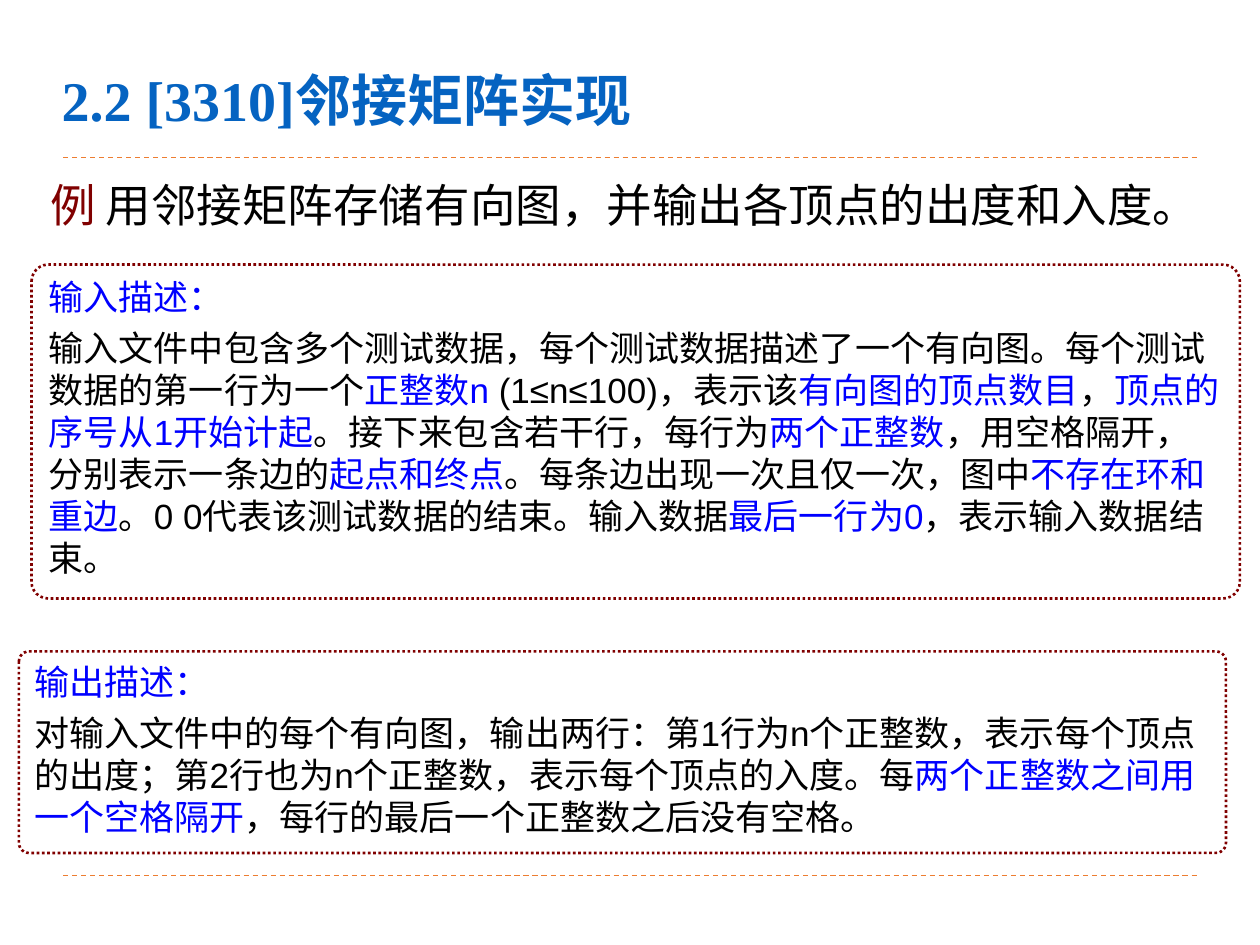
from dataclasses import dataclass

from lxml.etree import SubElement
from pptx import Presentation
from pptx.dml.color import RGBColor
from pptx.enum.dml import MSO_LINE_DASH_STYLE as Dash
from pptx.enum.shapes import MSO_CONNECTOR as Connector, MSO_SHAPE as Shape
from pptx.enum.text import MSO_ANCHOR as Anchor, PP_ALIGN as Align
from pptx.oxml.ns import qn
from pptx.slide import Slide
from pptx.util import Inches, Pt


def color(value):
    return RGBColor.from_string(value)


@dataclass
class SlideBuilder:
    page: Slide
    body_font: str = "Arial"
    title_font: str = "Times New Roman"
    title_color: str = "0563C1"
    rule_color: str = "ED7D31"
    border: str = "800000"
    text: str = "000000"
    highlight: str = "0000FF"
    paper: str = "FFFFFF"

    def rule(self, y):
        """Draw a dashed line across the page at height y."""
        line = self.page.shapes.add_connector(
            Connector.STRAIGHT, Inches(0.5), Inches(y), Inches(9.5), Inches(y))
        line.line.color.rgb = color(self.rule_color)
        line.line.width = Pt(0.75)
        line.line.dash_style = Dash.DASH
        SubElement(line.element.spPr, qn("a:effectLst"))

    def title(self, words, place):
        box = self.page.shapes.add_textbox(*map(Inches, place))
        box.text_frame.word_wrap = True
        para = box.text_frame.paragraphs[0]
        para.text = words
        para.font.name = self.title_font
        para.font.size = Pt(32)
        para.font.bold = True
        para.font.color.rgb = color(self.title_color)

    def panel(self, paragraphs, place, size, rounding, dotted=True, space_after=0):
        """Add a rounded box; each paragraph is a list of (words, colour) pairs."""
        box = self.page.shapes.add_shape(Shape.ROUNDED_RECTANGLE, *map(Inches, place))
        box.adjustments[0] = rounding
        box.shadow.inherit = False
        box.fill.solid()
        box.fill.fore_color.rgb = color(self.paper)
        if dotted:
            box.line.color.rgb = color(self.border)
            box.line.width = Pt(1.5)
            box.line.dash_style = Dash.ROUND_DOT
        else:
            box.line.fill.background()

        frame = box.text_frame
        frame.word_wrap = True
        frame.vertical_anchor = Anchor.TOP
        for index, spans in enumerate(paragraphs):
            para = frame.add_paragraph() if index else frame.paragraphs[0]
            para.alignment = Align.LEFT
            para.space_after = Pt(space_after)
            para.font.name = self.body_font
            para.font.size = Pt(size)
            for words, shade in spans:
                span = para.add_run()
                span.text = words
                span.font.color.rgb = color(shade)

    def description(self, heading, pieces, place):
        """Add a dotted panel whose every second piece of text is highlighted."""
        shades = (self.text, self.highlight)
        body = [(words, shades[i % 2]) for i, words in enumerate(pieces)]
        self.panel([[(heading, self.highlight)], body], place, 20, 0.05, space_after=5)


INPUT_PIECES = [
    "输入文件中包含多个测试数据，每个测试数据描述了一个有向图。每个测试数据的第一行为一个",
    "正整数n",
    " (1≤n≤100)，表示该",
    "有向图的顶点数目",
    "，",
    "顶点的序号从1开始计起",
    "。接下来包含若干行，每行为",
    "两个正整数",
    "，用空格隔开，分别表示一条边的",
    "起点和终点",
    "。每条边出现一次且仅一次，图中",
    "不存在环和重边",
    "。0 0代表该测试数据的结束。输入数据",
    "最后一行为0",
    "，表示输入数据结束。",
]
OUTPUT_PIECES = [
    "对输入文件中的每个有向图，输出两行：第1行为n个正整数，表示每个顶点的出度；"
    "第2行也为n个正整数，表示每个顶点的入度。每",
    "两个正整数之间用一个空格隔开",
    "，每行的最后一个正整数之后没有空格。",
]


def main():
    deck = Presentation()
    deck.slide_width, deck.slide_height = Inches(10), Inches(7.5)
    builder = SlideBuilder(deck.slides.add_slide(deck.slide_layouts[6]))

    for y in (6.95, 1.25):
        builder.rule(y)
    builder.description("输出描述：", OUTPUT_PIECES, (0.15, 5.17, 9.58, 1.6))
    example = [("例 ", builder.border),
               ("用邻接矩阵存储有向图，并输出各顶点的出度和入度。", builder.text)]
    builder.panel([example], (0.27, 1.33, 9.46, 0.6), 26, 0.17, dotted=False)
    builder.description("输入描述：", INPUT_PIECES, (0.25, 2.1, 9.59, 2.65))
    builder.title("2.2 [3310]邻接矩阵实现", (0.39, 0.47, 6.04, 0.64))

    deck.save("out.pptx")


if __name__ == "__main__":
    main()
